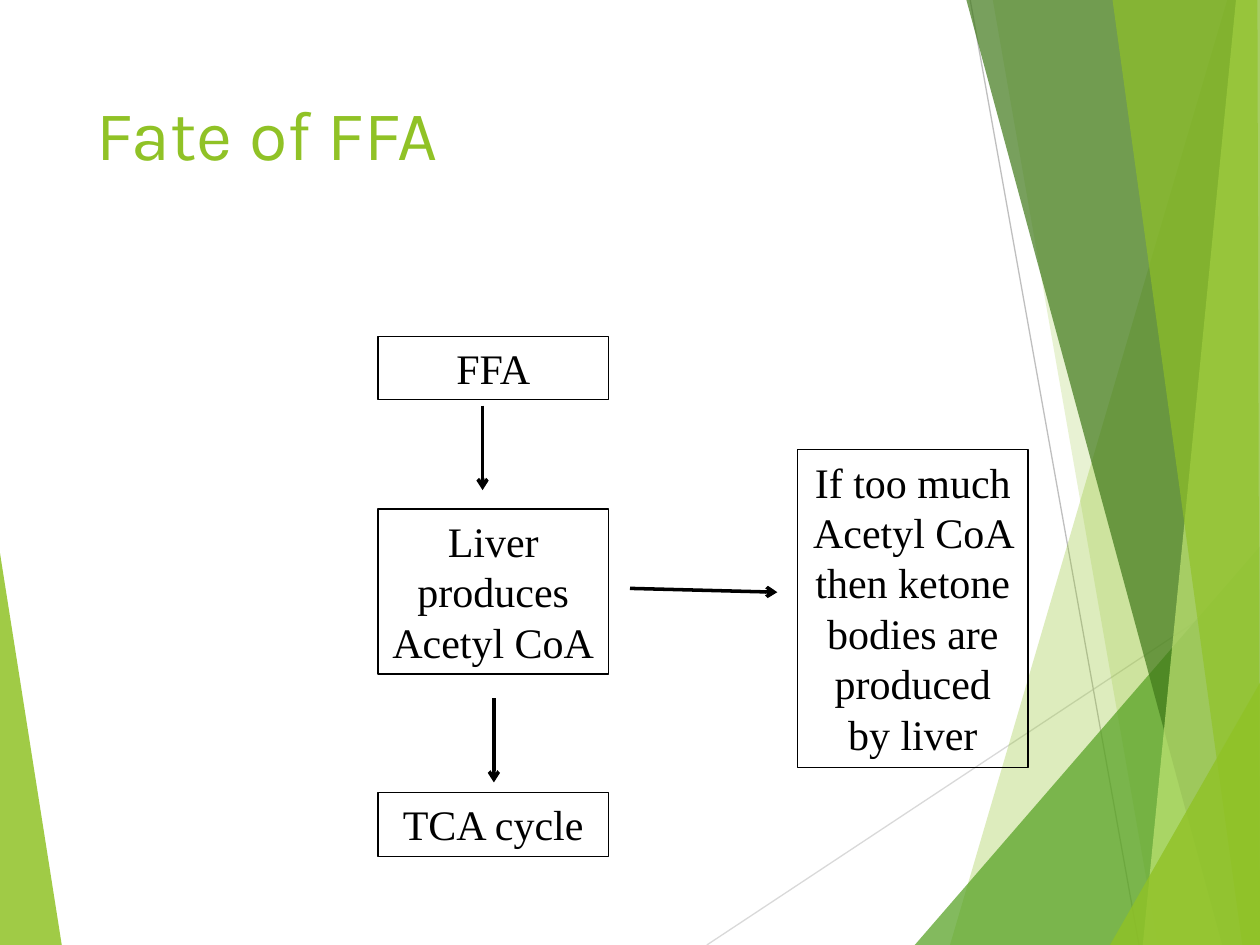
import pptx
import pptx.util
import pptx.dml.color
import pptx.enum.shapes
import pptx.enum.text
import pptx.oxml
import pptx.oxml.ns

COLUMNS, ROWS = 100, 75
CELL = pptx.util.Inches(0.1)

LEFT_FACET = ("90C226", 85, [(0, 43.9), (4.9, 75), (0, 75)])
RIGHT_FACETS = [
    ("90C226", 30, [(22, 0), (0, 75), (25, 75), (25, 0)]),
    ("90C226", 20, [(3.4, 0), (16.5, 75), (25, 75), (25, 0)]),
    ("54A021", 72, [(-2.8, 75), (25, 42.9), (25, 75)]),
    ("3F7819", 70, [(1.3, 0), (21.6, 75), (25, 75), (25, 0)]),
    ("C0E474", 70, [(22.7, 0), (15.3, 75), (25, 75), (25, 0)]),
    ("90C226", 65, [(12.9, 0), (23.2, 75), (24.6, 75), (24.4, 0)]),
    ("90C226", 80, [(12.7, 75), (25, 53.5), (25, 75)]),
]
RAYS = [("D9D9D9", (-19.3, 75), (25, 45.7)), ("BFBFBF", (1.6, 0), (15, 75))]
NODE_WIDTH = 18.3
NODES = [
    ("FFA", 0, 0, 5),
    ("Liver produces Acetyl CoA", 0, 13.7, 13.1),
    ("TCA cycle", 0, 36.2, 5.1),
    ("If too much Acetyl CoA then ketone bodies are produced by liver", 33.3, 9, 25.2),
]
ARROWS = [
    ((8.3, 5.5), (8.3, 12.2)),
    ((9.2, 28.7), (9.2, 35.4)),
    ((20, 20), (31.7, 20.3)),
]


def color(value):
    return pptx.dml.color.RGBColor.from_string(value)


def cells(*counts):
    return [round(count * CELL) for count in counts]


def add_child(parent, tag, **attributes):
    child = pptx.oxml.parse_xml(f"<a:{tag} {pptx.oxml.ns.nsdecls('a')}/>")
    for name, value in attributes.items():
        child.set(name, value)
    parent.append(child)


def add_facet(slide, box, fill, opacity, points):
    left, top = box[:2]
    corners = [cells(left + x, top + y) for x, y in points]
    builder = slide.shapes.build_freeform(*corners[0])
    builder.add_line_segments(corners[1:], close=True)
    shape = builder.convert_to_shape()
    shape.shadow.inherit = False
    shape.fill.solid()
    shape.fill.fore_color.rgb = color(fill)
    add_child(shape.fill.fore_color._xFill[0], "alpha", val=str(opacity * 1000))
    shape.line.fill.background()


def add_line(slide, box, start, end, stroke, weight, arrow=False):
    left, top = box[:2]
    connector = slide.shapes.add_connector(
        pptx.enum.shapes.MSO_CONNECTOR.STRAIGHT,
        *cells(left + start[0], top + start[1], left + end[0], top + end[1]))
    connector.line.color.rgb = color(stroke)
    connector.line.width = pptx.util.Pt(weight)
    if arrow:
        add_child(connector.line._get_or_add_ln(), "tailEnd", type="arrow")
    add_child(connector._element.spPr, "effectLst")


def write(shape, text, font, size, value, alignment):
    frame = shape.text_frame
    frame.word_wrap = True
    frame.text = text
    paragraph = frame.paragraphs[0]
    paragraph.alignment = alignment
    run = paragraph.runs[0]
    run.font.name = font
    run.font.size = pptx.util.Pt(size)
    run.font.color.rgb = color(value)


def draw_left_edge(slide, box):
    add_facet(slide, box, *LEFT_FACET)


def draw_right_edge(slide, box):
    for stroke, start, end in RAYS:
        add_line(slide, box, start, end, stroke, 0.75)
    for facet in RIGHT_FACETS:
        add_facet(slide, box, *facet)


def draw_title(slide, box):
    title = slide.shapes.add_textbox(*cells(*box))
    write(title, "Fate of FFA", "Karla", 40, "90C226", pptx.enum.text.PP_ALIGN.LEFT)
    title.text_frame.vertical_anchor = pptx.enum.text.MSO_ANCHOR.TOP


def draw_flow(slide, box):
    left, top = box[:2]
    for text, column, row, height in NODES:
        node = slide.shapes.add_shape(
            pptx.enum.shapes.MSO_SHAPE.RECTANGLE,
            *cells(left + column, top + row, NODE_WIDTH, height))
        node.shadow.inherit = False
        node.fill.background()
        node.line.color.rgb = color("000000")
        node.line.width = pptx.util.Pt(0.75)
        write(node, text, "Times New Roman", 24, "000000", pptx.enum.text.PP_ALIGN.CENTER)
        node.text_frame.vertical_anchor = pptx.enum.text.MSO_ANCHOR.TOP
        node.text_frame.auto_size = pptx.enum.text.MSO_AUTO_SIZE.SHAPE_TO_FIT_TEXT
    for start, end in ARROWS:
        add_line(slide, box, start, end, "000000", 2, arrow=True)


def main():
    presentation = pptx.Presentation()
    presentation.slide_width, presentation.slide_height = cells(COLUMNS, ROWS)
    slide = presentation.slides.add_slide(presentation.slide_layouts[6])
    draw_left_edge(slide, (0, 0, 5, ROWS))
    draw_right_edge(slide, (75.4, 0, 24.6, ROWS))
    draw_title(slide, (6.7, 6.7, 85.8, 14.4))
    draw_flow(slide, (30, 26.7, 51.6, 41.3))
    presentation.save("out.pptx")


if __name__ == "__main__":
    main()
